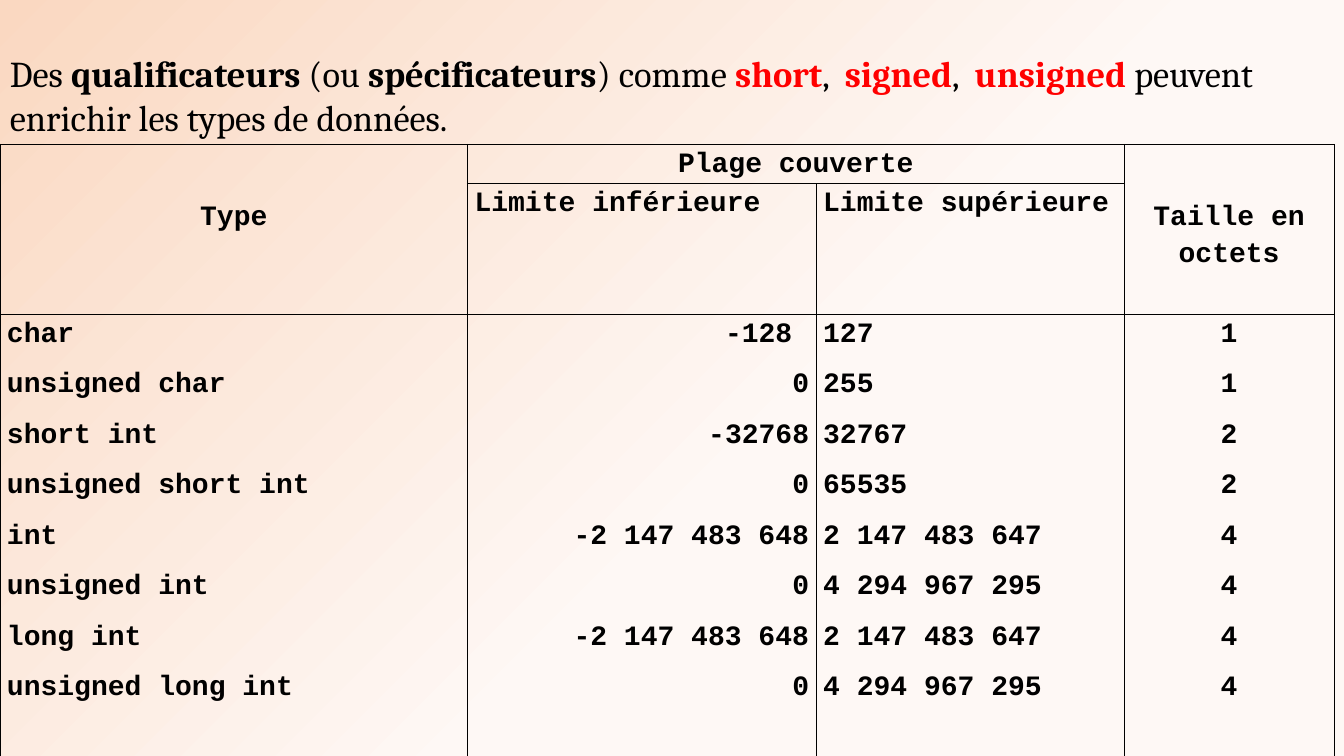
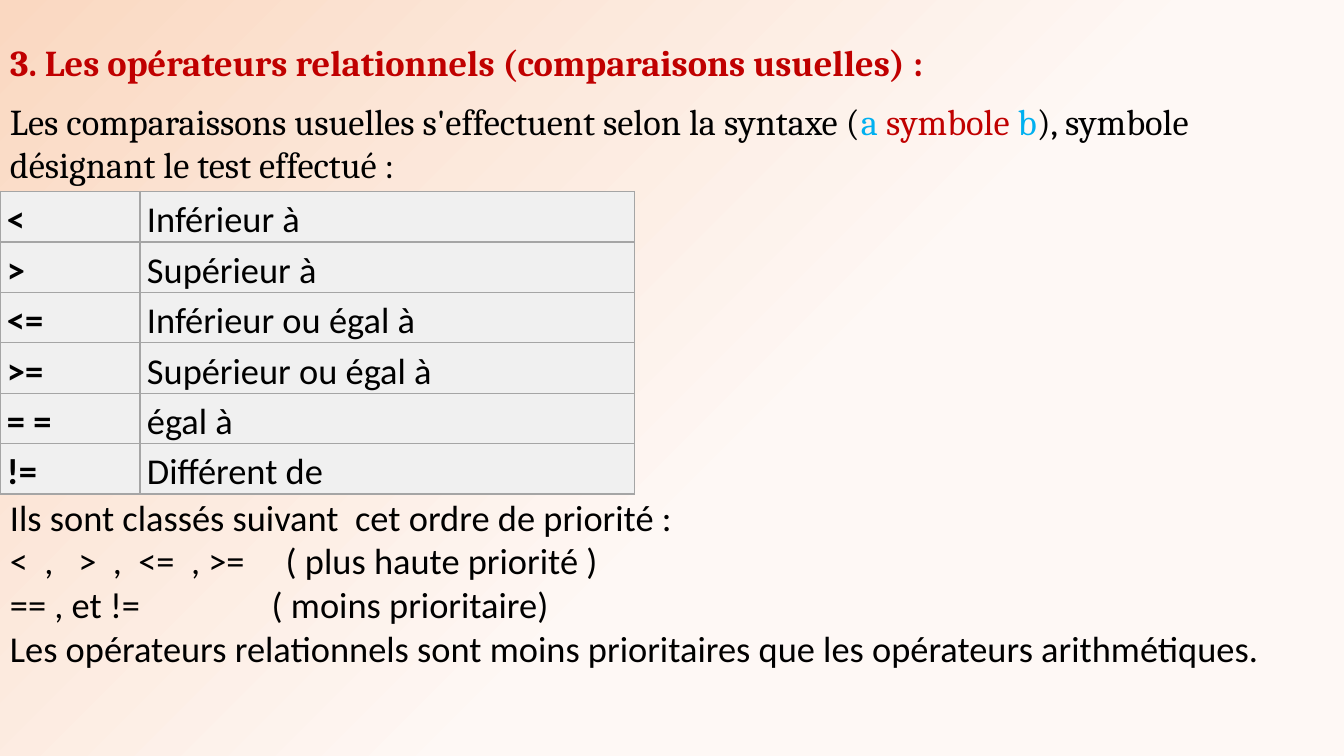
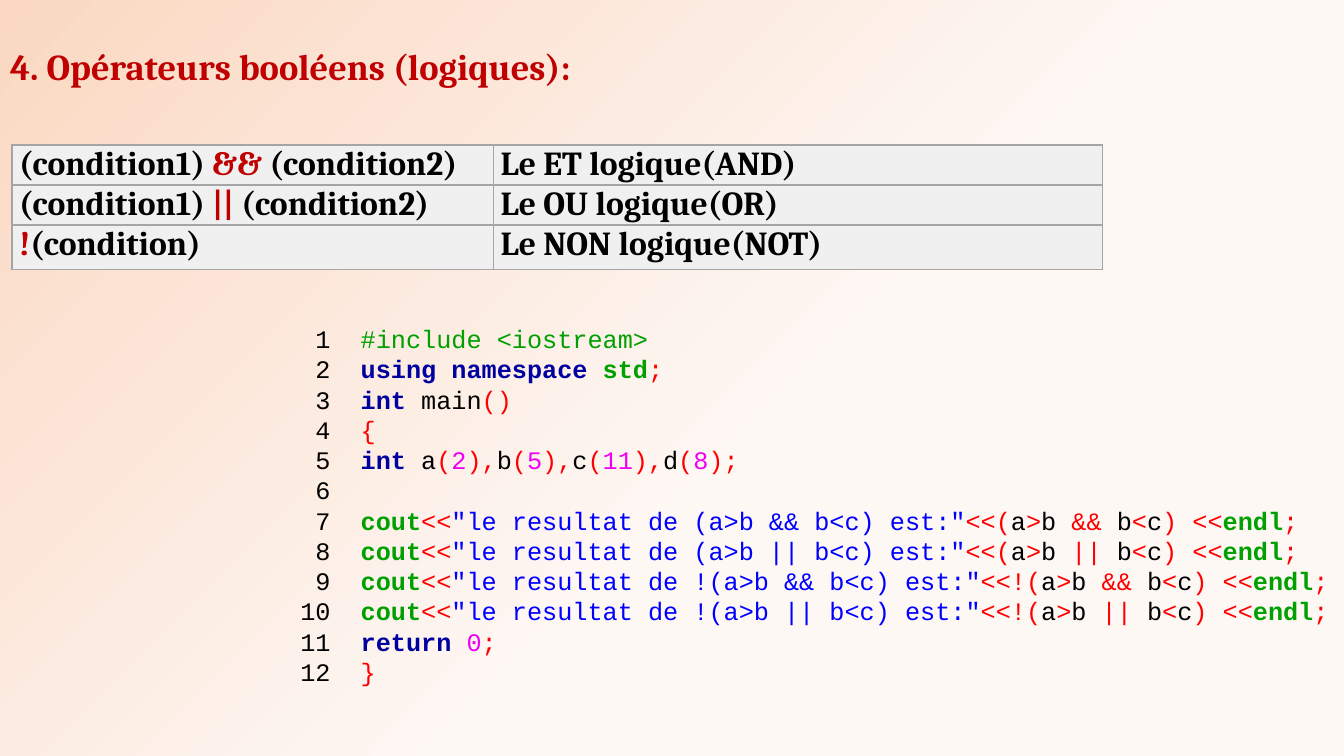
from dataclasses import dataclass, replace

from lxml import etree
from pptx import Presentation
from pptx.dml.color import RGBColor
from pptx.enum.text import MSO_ANCHOR, MSO_AUTO_SIZE, PP_ALIGN
from pptx.oxml import parse_xml
from pptx.oxml.ns import nsdecls, qn
from pptx.util import Pt

LEFT, RIGHT, MID, FULL = PP_ALIGN.LEFT, PP_ALIGN.RIGHT, PP_ALIGN.CENTER, PP_ALIGN.JUSTIFY
TOP = MSO_ANCHOR.TOP
FIT, FIXED = MSO_AUTO_SIZE.SHAPE_TO_FIT_TEXT, MSO_AUTO_SIZE.NONE
TITLE_ONLY, BLANK = 5, 6


@dataclass(frozen=True)
class Look:
    font: str
    size: float
    colour: str = "000000"
    bold: bool = False
    align: PP_ALIGN = LEFT
    after: float = 0
    lead: float = 1


@dataclass(frozen=True)
class Theme:
    pale: str = "FEF8F5"
    peach: str = "FAD8C1"
    black: str = "000000"
    dark: str = "C00000"
    red: str = "FF0000"
    sky: str = "00B0F0"
    grey: str = "A5A5A5"
    light: str = "F0F0F0"
    green: str = "00A000"
    navy: str = "0000A0"
    blue: str = "0000FF"
    pink: str = "F000F0"
    title: Look = Look("Cambria", 26, "C00000", True)
    body: Look = Look("Cambria", 26)
    plain: Look = Look("Calibri", 26)
    code: Look = Look("Courier New", 18)
    types: Look = Look("Courier New", 20, bold=True, after=10, lead=1.15)
    signs: Look = Look("Calibri", 26, align=FULL, after=10, lead=1.15)
    logic: Look = Look("Cambria", 24, bold=True, align=FULL, after=10)


T = Theme()


class Deck:
    def __init__(self):
        self.prs = Presentation()
        self.prs.slide_width, self.prs.slide_height = Pt(960), Pt(540)
        self.slide = None
        self.paint()

    def paint(self):
        """Give the master a gradient that fades from the top left corner."""
        fill = self.prs.slide_master.background.fill
        fill.gradient()
        old = self.prs.slide_master.element.find(".//" + qn("a:gradFill"))
        stops = "".join(
            f'<a:gs pos="{pos}"><a:srgbClr val="{colour}"/></a:gs>'
            for pos, colour in ((42000, T.pale), (100000, T.peach)))
        old.getparent().replace(old, parse_xml(
            f'<a:gradFill {nsdecls("a")} rotWithShape="1"><a:gsLst>{stops}</a:gsLst>'
            '<a:path path="circle"><a:fillToRect l="100000" t="100000"/></a:path>'
            '</a:gradFill>'))

    def add(self, layout):
        self.slide = self.prs.slides.add_slide(self.prs.slide_layouts[layout])

    def put(self, frame, lines, look):
        """Fill a frame; a line is a text or a list of texts and (text, colour, bold)."""
        for i, line in enumerate(lines):
            para = frame.add_paragraph() if i else frame.paragraphs[0]
            para.alignment = look.align
            para.line_spacing = look.lead
            para.space_after = Pt(look.after)
            for part in [line] if isinstance(line, str) else line:
                if isinstance(part, str):
                    part = (part, look.colour, look.bold)
                text, colour, bold = part
                run = para.add_run()
                run.text = text
                run.font.name, run.font.size = look.font, Pt(look.size)
                run.font.bold = bold
                run.font.color.rgb = RGBColor.from_string(colour)

    def title(self, text, top, width):
        box = self.slide.shapes.title
        box.left, box.top, box.width, box.height = Pt(0), Pt(top), Pt(width), Pt(39)
        frame = box.text_frame
        frame.auto_size, frame.vertical_anchor = FIXED, TOP
        self.put(frame, [text], T.title)

    def text(self, at, lines, look):
        frame = self.slide.shapes.add_textbox(*map(Pt, at)).text_frame
        frame.word_wrap, frame.auto_size = True, FIT
        self.put(frame, lines, look)
        return frame

    def table(self, left, top, cols, rows, edge, fill=None):
        size = Pt(left), Pt(top), Pt(sum(cols)), Pt(sum(rows))
        grid = self.slide.shapes.add_table(len(rows), len(cols), *size).table
        grid.first_row = grid.horz_banding = False
        for col, width in zip(grid.columns, cols):
            col.width = Pt(width)
        for row, height in zip(grid.rows, rows):
            row.height = Pt(height)
        for cell in grid.iter_cells():
            cell.margin_left = cell.margin_right = Pt(5)
            cell.margin_top = cell.margin_bottom = Pt(0)
            if fill:
                cell.fill.solid()
                cell.fill.fore_color.rgb = RGBColor.from_string(fill)
            else:
                cell.fill.background()
            self.frame(cell, edge)
        return grid

    def frame(self, cell, colour):
        """Draw a thin border on all four sides of a cell."""
        props = cell._tc.get_or_add_tcPr()
        for i, side in enumerate("LRTB"):
            props.insert(i, parse_xml(
                f'<a:ln{side} {nsdecls("a")} w="12700"><a:solidFill>'
                f'<a:srgbClr val="{colour}"/></a:solidFill></a:ln{side}>'))


def tab(para, pos):
    """Set one left tab stop."""
    stops = etree.SubElement(para._p.get_or_add_pPr(), qn("a:tabLst"))
    etree.SubElement(stops, qn("a:tab"), pos=str(Pt(pos)), algn="l")


def types(deck):
    deck.add(BLANK)
    deck.text((0, 33, 953, 70), [[
        "Des ", ("qualificateurs ", T.black, True), "(ou ",
        ("spécificateurs", T.black, True), ") comme ",
        ("short", T.red, True), ",  ", ("signed", T.red, True), ",  ",
        ("unsigned ", T.red, True), "peuvent enrichir les types de données."]], T.body)

    grid = deck.table(0, 103.2, (334, 249, 220, 150), (28, 93, 323), T.black)
    for col in (0, 3):
        grid.cell(0, col).merge(grid.cell(1, col))
        grid.cell(0, col).margin_top = Pt(38)
    grid.cell(0, 1).merge(grid.cell(0, 2))
    heads = ((0, 0, "Type", MID), (0, 1, "Plage couverte", MID),
             (0, 3, "Taille en octets", MID),
             (1, 1, "Limite inférieure", LEFT), (1, 2, "Limite supérieure", LEFT))
    for row, col, text, align in heads:
        deck.put(grid.cell(row, col).text_frame, [text], replace(T.types, align=align))

    ranges = (
        ("char", "-128 ", "127", "1"),
        ("unsigned char", "0", "255", "1"),
        ("short int", "-32768", "32767", "2"),
        ("unsigned short int", "0", "65535", "2"),
        ("int", "-2 147 483 648", "2 147 483 647", "4"),
        ("unsigned int", "0", "4 294 967 295", "4"),
        ("long int", "-2 147 483 648", "2 147 483 647", "4"),
        ("unsigned long int", "0", "4 294 967 295", "4"))
    for col, (lines, align) in enumerate(zip(zip(*ranges), (LEFT, RIGHT, LEFT, MID))):
        deck.put(grid.cell(2, col).text_frame, lines, replace(T.types, align=align))


def compare(deck):
    deck.add(TITLE_ONLY)
    deck.title("3. Les opérateurs relationnels (comparaisons usuelles) :", 25.2, 904)
    deck.text((0, 67, 960, 70), [[
        "Les comparaissons usuelles s'effectuent selon la syntaxe (",
        ("a ", T.sky, False), ("symbole ", T.dark, False), ("b", T.sky, False),
        "), symbole désignant le test effectué :"]], T.body)

    signs = (("<", "Inférieur à"), (">", "Supérieur à"),
             ("<=", "Inférieur ou égal à"), (">=", "Supérieur ou égal à"),
             ("= =", "égal à"), ("!=", "Différent de"))
    grid = deck.table(0, 136.8, (100, 353), [36] * len(signs), T.grey, T.light)
    for row, (sign, name) in enumerate(signs):
        deck.put(grid.cell(row, 0).text_frame, [sign], replace(T.signs, bold=True))
        deck.put(grid.cell(row, 1).text_frame, [name], T.signs)

    frame = deck.text((0, 350, 960, 133), [
        "Ils sont classés suivant  cet ordre de priorité :",
        "<  ,   >  ,  <=  , >=\t( plus haute priorité )",
        "== , et !=\t( moins prioritaire)",
        "Les opérateurs relationnels sont moins prioritaires que les opérateurs "
        "arithmétiques."], T.plain)
    for para, pos in zip(frame.paragraphs[1:3], (197, 187)):
        tab(para, pos)


def red(text):
    return text, T.red, False


def word(text):
    return text, T.navy, True


def name(text):
    return text, T.green, True


def digit(text):
    return text, T.pink, False


def define(pairs):
    """Code that declares and sets several integers."""
    line = [word("int ")]
    for i, (label, value) in enumerate(pairs, 1):
        end = ");" if i == len(pairs) else "),"
        line += [label, red("("), digit(value), red(end)]
    return line


def show(sign, test):
    """Code that prints the result of one test."""
    return [name("cout"), red("<<"),
            (f'"le resultat de {sign}(a>b {test} b<c) est:"', T.blue, False),
            red(f"<<{sign}("), "a", red(">"), "b ", red(f"{test} "),
            "b", red("<"), "c", red(") <<"), name("endl"), red(";")]


def logic(deck):
    deck.add(TITLE_ONLY)
    deck.title("4. Opérateurs booléens (logiques):", 28, 487)
    tests = (("(condition1) ", "&&", " (condition2)", "Le ET logique(AND)"),
             ("(condition1) ", "||", " (condition2)", "Le OU logique(OR)"),
             ("", "!", "(condition)", "Le NON logique(NOT)"))
    grid = deck.table(8.6, 103.6, (344, 434.8), (28.6, 28.6, 31.8), T.grey, T.light)
    for row, (left, sign, right, text) in enumerate(tests):
        parts = [part for part in (left, (sign, T.dark, True), right) if part]
        deck.put(grid.cell(row, 0).text_frame, [parts], T.logic)
        deck.put(grid.cell(row, 1).text_frame, [text], T.logic)

    code = [
        [("#include <iostream>", T.green, False)],
        [word("using namespace "), name("std"), red(";")],
        [word("int "), "main", red("()")],
        [red("{")],
        define((("a", "2"), ("b", "5"), ("c", "11"), ("d", "8"))),
        [],
        *(show(sign, test) for sign in ("", "!") for test in ("&&", "||")),
        [word("return "), digit("0"), red(";")],
        [red("}")]]
    lines = [[f"{n:>2}" + ("  " if line else ""), *line]
             for n, line in enumerate(code, 1)]
    deck.text((207.4, 227.5, 752.6, 269), lines, T.code)


def main():
    deck = Deck()
    for build in (types, compare, logic):
        build(deck)
    deck.prs.save("out.pptx")


if __name__ == "__main__":
    main()
